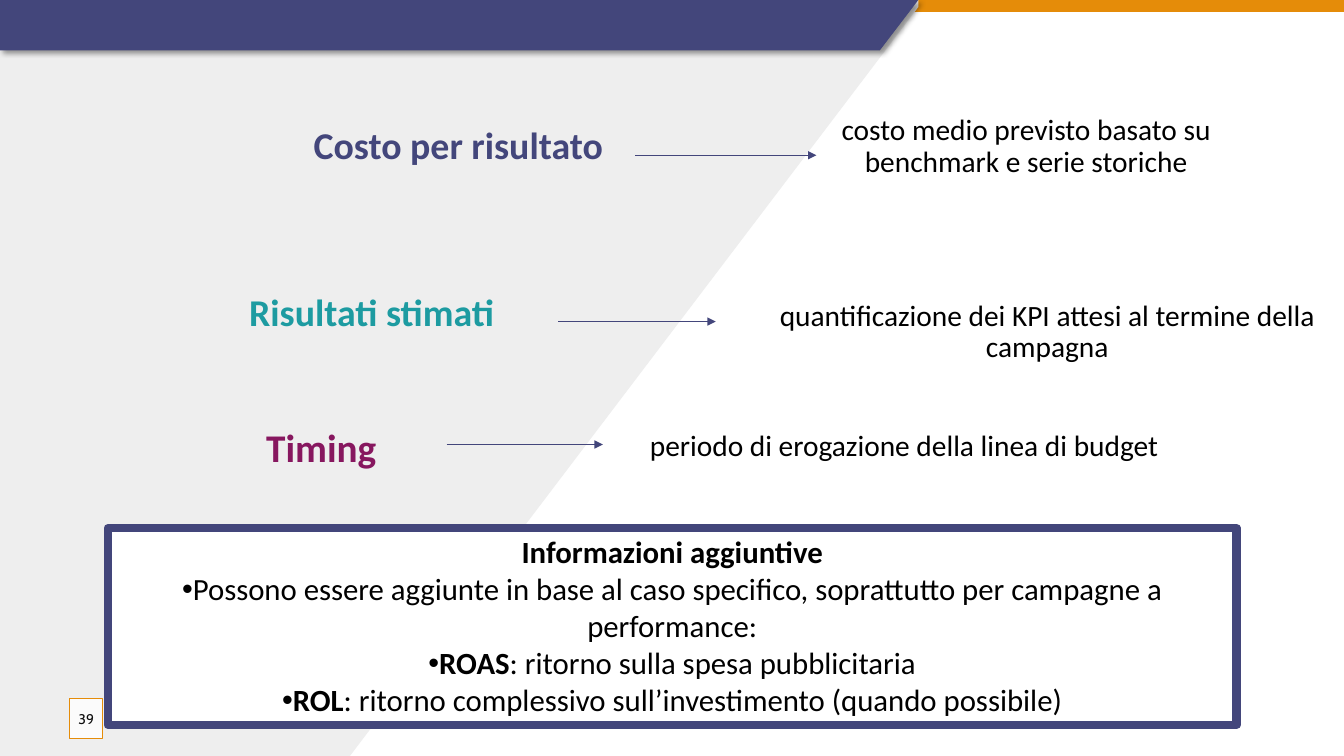
"""Build the slide on cost per result, estimated results and timing of a campaign."""
from lxml import etree
from pptx import Presentation
from pptx.dml.color import RGBColor
from pptx.enum.shapes import MSO_CONNECTOR, MSO_SHAPE
from pptx.enum.text import MSO_ANCHOR, PP_ALIGN
from pptx.oxml import parse_xml
from pptx.oxml.ns import qn
from pptx.util import Pt

STRAIGHT = MSO_CONNECTOR.STRAIGHT
RECTANGLE = MSO_SHAPE.RECTANGLE
TOP, MIDDLE = MSO_ANCHOR.TOP, MSO_ANCHOR.MIDDLE
CENTER, RIGHT = PP_ALIGN.CENTER, PP_ALIGN.RIGHT

INDIGO = RGBColor(0x43, 0x46, 0x7B)
TEAL = RGBColor(0x1D, 0x9B, 0xA1)
PLUM = RGBColor(0x87, 0x17, 0x5F)
ORANGE = RGBColor(0xE5, 0x8C, 0x09)
GREY = RGBColor(0xEE, 0xEE, 0xEE)
WHITE = RGBColor(0xFF, 0xFF, 0xFF)
BLACK = RGBColor(0, 0, 0)
NEAR_BLACK = RGBColor(0x0D, 0x0D, 0x0D)

HEADER_SHADOW = (
    '<a:effectLst xmlns:a="http://schemas.openxmlformats.org/drawingml/2006/main">'
    '<a:outerShdw blurRad="50800" dist="38100" dir="2700000" algn="tl" rotWithShape="0">'
    '<a:srgbClr val="000000"><a:alpha val="40000"/></a:srgbClr>'
    '</a:outerShdw></a:effectLst>'
)

prs = Presentation()
prs.slide_width, prs.slide_height = Pt(960), Pt(540)
slide = prs.slides.add_slide(prs.slide_layouts[6])
shapes = slide.shapes


def paint(shape, fill, line=None, width=0):
    """Give a shape its fill and outline, without a shadow."""
    shape.shadow.inherit = False
    shape.fill.solid()
    shape.fill.fore_color.rgb = fill
    if line is None:
        shape.line.fill.background()
    else:
        shape.line.color.rgb = line
        shape.line.width = Pt(width)


def style_run(run, size, color, bold=False, font="Calibri"):
    """Set the font of a run."""
    run.font.name = font
    run.font.size = Pt(size)
    run.font.color.rgb = color
    run.font.bold = bold


panel_outline = [(0, 0), (656, 0), (656, 5), (250, 540), (0, 540)]
header_outline = [(0, 0), (656, 0), (628.5, 36), (0, 36)]

top_strip = shapes.add_shape(RECTANGLE, 0, 0, Pt(960), Pt(8.6))
paint(top_strip, ORANGE)

for outline, color in ((panel_outline, GREY), (header_outline, INDIGO)):
    points = [(Pt(x), Pt(y)) for x, y in outline]
    builder = shapes.build_freeform(*points[0])
    builder.add_line_segments(points[1:], close=True)
    band = builder.convert_to_shape()
    paint(band, color)

band_properties = band._element.spPr
band_properties.replace(band_properties.find(qn("a:effectLst")), parse_xml(HEADER_SHADOW))

entries = [
    ("costo medio previsto basato su benchmark e serie storiche",
     (563, 35.3, 340, 139.7), CENTER, 21, BLACK),
    ("Costo per risultato", (49, 35.3, 388.8, 139.7), RIGHT, 27, INDIGO),
    ("quantificazione dei KPI attesi al termine della campagna",
     (535.7, 201.6, 424.8, 72), CENTER, 21, BLACK),
    ("Risultati stimati", (43.2, 123.8, 316.8, 200.9), RIGHT, 27, TEAL),
    ("periodo di erogazione della linea di budget",
     (389.5, 110.9, 512.6, 416.9), CENTER, 21, BLACK),
    ("Timing", (43.2, 201.6, 232.6, 239), RIGHT, 28, PLUM),
]
for text, bounds, alignment, size, color in entries:
    entry = shapes.add_textbox(*map(Pt, bounds))
    frame = entry.text_frame
    frame.word_wrap = True
    frame.vertical_anchor = MIDDLE
    frame.text = text
    paragraph = frame.paragraphs[0]
    paragraph.alignment = alignment
    paragraph.line_spacing = 0.9
    paragraph.space_before, paragraph.space_after = Pt(12), Pt(2)
    style_run(paragraph.runs[0], size, color, bold=alignment == RIGHT)

page_number = shapes.add_shape(RECTANGLE, Pt(49.7), Pt(499), Pt(23.8), Pt(28.8))
paint(page_number, WHITE, ORANGE, 0.75)
page_color = page_number._element.spPr.find(qn("a:solidFill"))[0]
etree.SubElement(page_color, qn("a:alpha"), val="82000")
frame = page_number.text_frame
frame.margin_left = frame.margin_right = 0
frame.vertical_anchor = MIDDLE
frame.text = "39"
frame.paragraphs[0].alignment = CENTER
style_run(frame.paragraphs[0].runs[0], 10, NEAR_BLACK, font="Cabin")

extra_info = shapes.add_shape(RECTANGLE, Pt(77), Pt(377.3), Pt(806.4), Pt(140.4))
paint(extra_info, WHITE, INDIGO, 6)
frame = extra_info.text_frame
frame.word_wrap = True
frame.vertical_anchor = TOP
info_lines = [
    ("Informazioni aggiuntive", ""),
    ("", "Possono essere aggiunte in base al caso specifico, "
         "soprattutto per campagne a performance:"),
    ("ROAS", ": ritorno sulla spesa pubblicitaria"),
    ("ROL", ": ritorno complessivo sull’investimento (quando possibile)"),
]
for index, (term, explanation) in enumerate(info_lines):
    paragraph = frame.add_paragraph() if index else frame.paragraphs[0]
    paragraph.alignment = CENTER
    for text, bold in ((term, True), (explanation, False)):
        if text:
            run = paragraph.add_run()
            run.text = text
            style_run(run, 22, BLACK, bold)
    if index:
        properties = paragraph._p.get_or_add_pPr()
        properties.set("marL", "0")
        properties.set("indent", "0")
        etree.SubElement(properties, qn("a:buFont"), typeface="Arial")
        etree.SubElement(properties, qn("a:buChar"), char="•")

for start, end, y in ((453.6, 583.2, 110.9), (398.9, 511.2, 229.7), (319, 430.6, 317.5)):
    arrow = shapes.add_connector(STRAIGHT, Pt(start), Pt(y), Pt(end), Pt(y))
    arrow.line.color.rgb = INDIGO
    arrow.line.width = Pt(0.75)
    etree.SubElement(arrow.line._get_or_add_ln(), qn("a:tailEnd"), type="triangle")
    etree.SubElement(arrow._element.spPr, qn("a:effectLst"))

prs.save("out.pptx")
